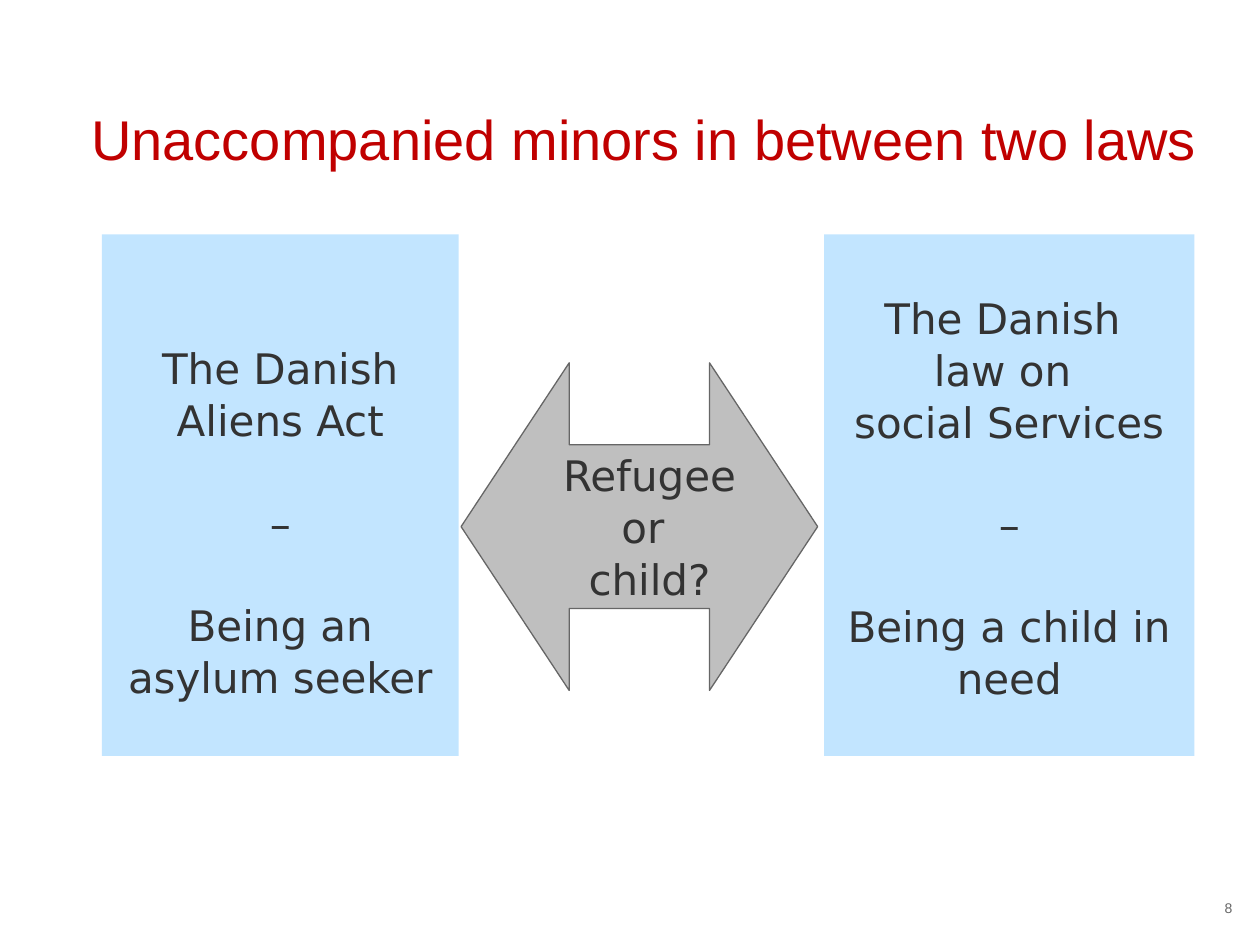
from lxml import etree
from pptx import Presentation
from pptx import util as u
from pptx.dml.color import RGBColor
from pptx.enum import shapes, text

COLORS = {"title": "C00000", "panel": "C2E5FF", "arrow": "BFBFBF",
          "outline": "666666", "body": "333333", "number": "666666"}
TITLE = "Unaccompanied minors in between two laws"
PAGE = "8"
QUESTION = ["Refugee or ", "child?"]
# left, width, blank lines on top, (text, blank lines before it)
LAWS = [
    (0.81, 2.83, 2, [("The Danish Aliens Act", 0), ("–", 1),
                     ("Being an asylum seeker", 1)]),
    (6.54, 2.94, 1, [("The Danish ", 0), ("law on ", 0), ("social Services", 0),
                     ("–", 1), ("Being a child in need", 1)]),
]
PANEL_TOP, PANEL_HEIGHT = 1.86, 4.14
LINE = 0.4  # height of one line of body text
BODY = dict(size=24, font="DejaVu Sans", color="body", spacing=1.03)

prs = Presentation()
prs.slide_width, prs.slide_height = u.Inches(10), u.Inches(7.5)
slide = prs.slides.add_slide(prs.slide_layouts[6])


def rgb(name):
    return RGBColor.from_string(COLORS[name])


def add_block(kind, box, fill, outline=None):
    block = slide.shapes.add_shape(kind, *map(u.Inches, box))
    block.shadow.inherit = False
    block.fill.solid()
    block.fill.fore_color.rgb = rgb(fill)
    if outline:
        block.line.color.rgb = rgb(outline)
        block.line.width = u.Pt(0.75)
    else:
        block.line.fill.background()
    return block


def write(holder, lines, size, font, color, spacing=None,
          align=text.PP_ALIGN.CENTER, anchor=text.MSO_ANCHOR.TOP, blank_top=0):
    """Fill a shape with (text, blank lines before it) pairs."""
    frame = holder.text_frame
    frame.word_wrap = True
    frame.vertical_anchor = anchor
    frame.margin_top = u.Inches(0.05 + blank_top * LINE)
    for i, (words, gap) in enumerate(lines):
        par = frame.paragraphs[0] if i == 0 else frame.add_paragraph()
        par.text = words
        par.alignment = align
        if spacing:
            par.line_spacing = spacing
        if gap:
            par.space_before = u.Pt(gap * LINE * 72)
        par.font.size = u.Pt(size)
        par.font.name = font
        par.font.color.rgb = rgb(color)


def add_text(box, lines, **style):
    holder = slide.shapes.add_textbox(*map(u.Inches, box))
    write(holder, [(line, 0) for line in lines], **style)


arrow = add_block(shapes.MSO_SHAPE.LEFT_RIGHT_ARROW, (3.66, 2.88, 2.83, 2.6),
                  "arrow", "outline")
arrow.adjustments[0], arrow.adjustments[1] = 0.5, 0.33

add_text((8.91, 7.08, 0.97, 0.25), [PAGE], size=8, font="Arial", color="number",
         align=text.PP_ALIGN.RIGHT, anchor=text.MSO_ANCHOR.MIDDLE)
add_text((0.51, 0.78, 9.21, 0.94), [TITLE], size=32, font="Arial", color="title")

for left, width, blank_top, lines in LAWS:
    panel = add_block(shapes.MSO_SHAPE.RECTANGLE,
                      (left, PANEL_TOP, width, PANEL_HEIGHT), "panel")
    write(panel, lines, blank_top=blank_top, **BODY)

add_text((4.29, 3.51, 1.73, 1.31), QUESTION, **BODY)

prs.save("out.pptx")
